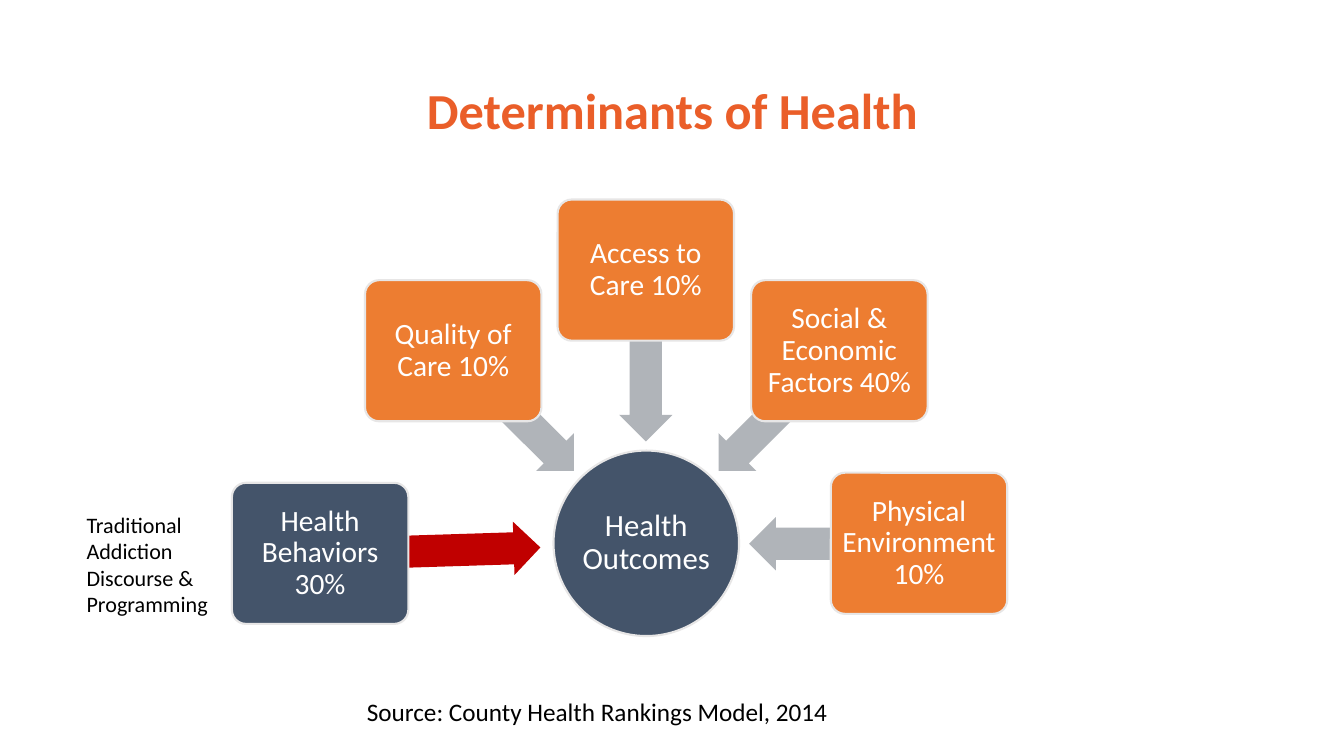
from dataclasses import dataclass

from pptx import Presentation
from pptx.dml.color import RGBColor
from pptx.enum.shapes import MSO_SHAPE as Preset
from pptx.enum.text import MSO_ANCHOR as Anchor, MSO_AUTO_SIZE as AutoSize, PP_ALIGN as Align
from pptx.shapes.autoshape import Shape
from pptx.slide import Slide
from pptx.text.text import TextFrame
from pptx.util import Inches, Pt


@dataclass(frozen=True)
class Theme:
    font: str = "Calibri"
    title: str = "EA5E29"
    orange: str = "ED7D31"
    navy: str = "44546A"
    red: str = "C00000"
    gray: str = "B0B4B9"
    outline: str = "E7E6E6"
    white: str = "FFFFFF"
    black: str = "000000"
    title_size: float = 36
    outcome_size: float = 22
    factor_size: float = 21
    source_size: float = 18
    note_size: float = 15.8


@dataclass(frozen=True)
class Factor:
    """A determinant box with the arrow that leads from it to the outcome."""
    label: str
    left: float
    top: float
    arrow_left: float
    arrow_top: float
    rotation: float
    arrow_width: float = 1.69
    fill: str = Theme.orange
    arrow_fill: str = Theme.gray


@dataclass(frozen=True)
class Caption:
    lines: tuple[str, ...]
    left: float
    top: float
    width: float
    height: float
    size: float


THEME = Theme()
FACTOR_WIDTH, FACTOR_HEIGHT = 1.75, 1.4
ARROW_HEIGHT = 0.53
FACTORS = (
    Factor("Health Behaviors 30%", 2.3, 4.79, 3.18, 5.2, 178.2, 2.18, THEME.navy, THEME.red),
    Factor("Quality of Care 10%", 3.62, 2.78, 4.25, 3.81, 225),
    Factor("Access to Care 10%", 5.53, 1.98, 5.56, 3.27, 270),
    Factor("Social & Economic Factors 40%", 7.45, 2.78, 6.88, 3.81, 315),
    Factor("Physical Environment 10%", 8.24, 4.69, 7.43, 5.13, 0),
)
CAPTIONS = (
    Caption(("Traditional Addiction Discourse &", "Programming"),
            0.76, 5.02, 1.55, 1.16, THEME.note_size),
    Caption(("Source: County Health Rankings Model, 2014",),
            3.54, 6.86, 8.99, 0.4, THEME.source_size),
)


def write_lines(frame: TextFrame, lines: tuple[str, ...], size: float, color: str,
                align: Align = Align.LEFT, spacing: float = 1.0, bold: bool = False) -> None:
    frame.word_wrap = True
    for index, line in enumerate(lines):
        paragraph = frame.paragraphs[0] if index == 0 else frame.add_paragraph()
        paragraph.alignment = align
        paragraph.line_spacing = spacing
        run = paragraph.add_run()
        run.text = line
        run.font.name = THEME.font
        run.font.size = Pt(size)
        run.font.bold = bold
        run.font.color.rgb = RGBColor.from_string(color)


def add_filled(slide: Slide, preset: Preset, left: float, top: float,
               width: float, height: float, fill: str) -> Shape:
    shape = slide.shapes.add_shape(preset, Inches(left), Inches(top), Inches(width), Inches(height))
    shape.shadow.inherit = False
    shape.fill.solid()
    shape.fill.fore_color.rgb = RGBColor.from_string(fill)
    shape.line.fill.background()
    return shape


def label_node(shape: Shape, label: str, size: float, inset: float) -> None:
    """Outline a node and centre its label inside."""
    shape.line.color.rgb = RGBColor.from_string(THEME.outline)
    shape.line.width = Pt(1.5)
    frame = shape.text_frame
    frame.margin_left = frame.margin_right = Inches(inset)
    frame.margin_top = frame.margin_bottom = Inches(inset)
    frame.vertical_anchor = Anchor.MIDDLE
    write_lines(frame, (label,), size, THEME.white, Align.CENTER, 0.9)


def add_factor(slide: Slide, factor: Factor) -> None:
    arrow = add_filled(slide, Preset.LEFT_ARROW, factor.arrow_left, factor.arrow_top,
                       factor.arrow_width, ARROW_HEIGHT, factor.arrow_fill)
    arrow.adjustments[0] = 0.6
    arrow.adjustments[1] = 0.5
    arrow.rotation = factor.rotation
    box = add_filled(slide, Preset.ROUNDED_RECTANGLE, factor.left, factor.top,
                     FACTOR_WIDTH, FACTOR_HEIGHT, factor.fill)
    box.adjustments[0] = 0.1
    label_node(box, factor.label, THEME.factor_size, 0.04)


def add_caption(slide: Slide, caption: Caption) -> None:
    box = slide.shapes.add_textbox(Inches(caption.left), Inches(caption.top),
                                   Inches(caption.width), Inches(caption.height))
    write_lines(box.text_frame, caption.lines, caption.size, THEME.black)
    box.text_frame.auto_size = AutoSize.SHAPE_TO_FIT_TEXT


def add_title(slide: Slide, text: str) -> None:
    title = slide.shapes.title
    title.left, title.top = Inches(0.92), Inches(0.4)
    title.width, title.height = Inches(11.5), Inches(1.45)
    frame = title.text_frame
    frame.auto_size = AutoSize.NONE
    frame.vertical_anchor = Anchor.MIDDLE
    write_lines(frame, (text,), THEME.title_size, THEME.title, Align.CENTER, 0.9, bold=True)


def main() -> None:
    presentation = Presentation()
    presentation.slide_width, presentation.slide_height = Inches(13.33), Inches(7.5)
    slide = presentation.slides.add_slide(presentation.slide_layouts.get_by_name("Title Only"))
    add_title(slide, "Determinants of Health")
    outcome = add_filled(slide, Preset.OVAL, 5.49, 4.47, 1.84, 1.84, THEME.navy)
    label_node(outcome, "Health Outcomes", THEME.outcome_size, 0)
    for factor in FACTORS:
        add_factor(slide, factor)
    for caption in CAPTIONS:
        add_caption(slide, caption)
    presentation.save("out.pptx")


if __name__ == "__main__":
    main()
